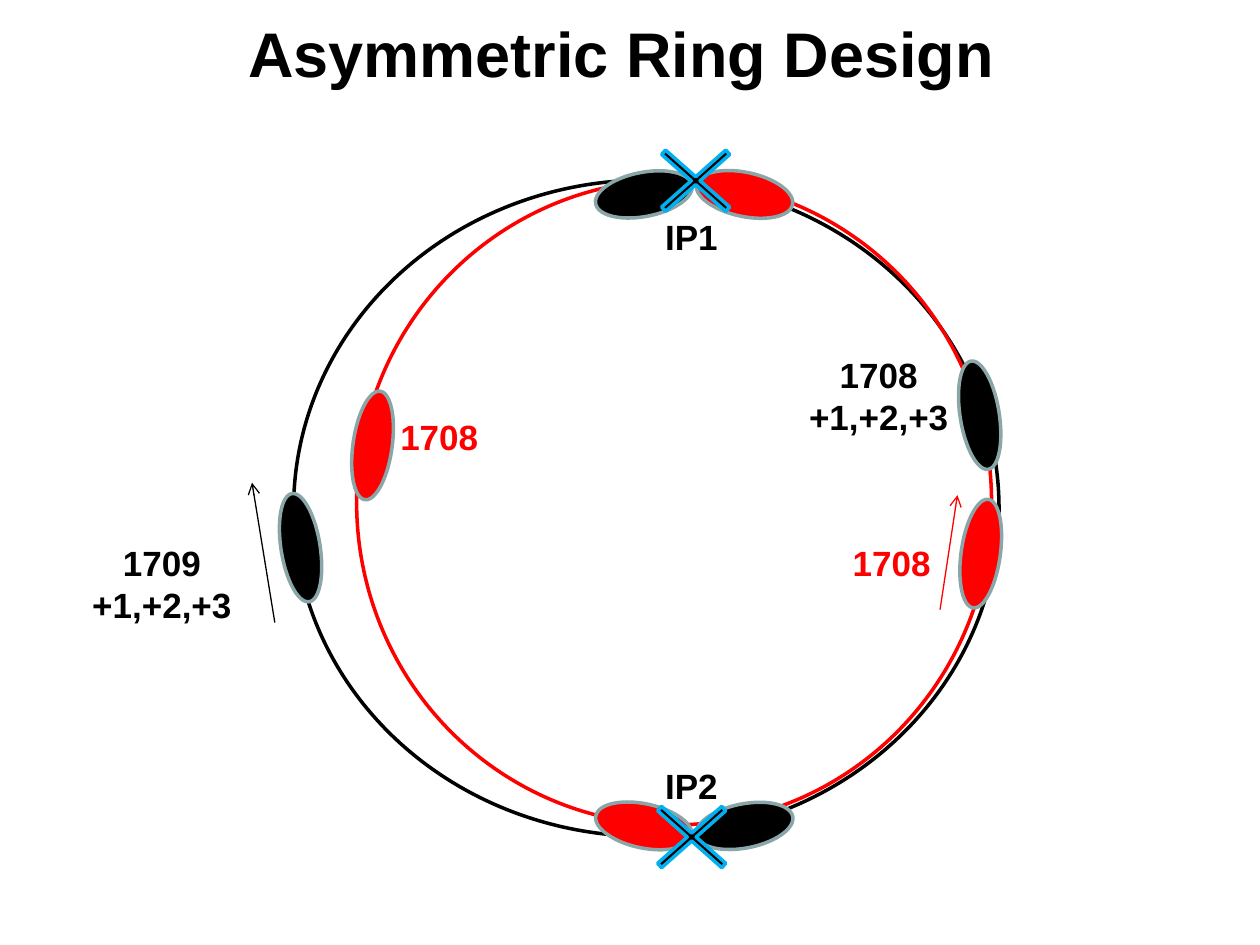
from lxml.etree import SubElement
from pptx import Presentation
from pptx.dml.color import RGBColor
from pptx.enum.shapes import MSO_CONNECTOR, MSO_SHAPE
from pptx.enum.text import MSO_ANCHOR, MSO_AUTO_SIZE, PP_ALIGN
from pptx.oxml.ns import qn
from pptx.util import Cm, Pt

BLACK, RED, GREY, CYAN = "000000", "FF0000", "8AA6A8", "00B0F0"

# Content, lengths in cm
TITLE = "Asymmetric Ring Design "
RINGS = [  # left, top, width, height, colour
    (5.92, 3.63, 14.22, 13.23, BLACK),
    (7.19, 3.63, 12.8, 13.0, RED),
]
IP_SIZE, ARC_SIZE, CROSS_SIZE = (1.98, 0.89), (2.21, 0.79), (2.49, 2.21)
MAGNETS = [  # centre x, centre y, size, rotation, colour
    (15.01, 3.92, IP_SIZE, 12, RED),
    (19.77, 11.16, ARC_SIZE, 98, RED),
    (7.51, 8.98, ARC_SIZE, 98, RED),
    (12.98, 16.65, IP_SIZE, 12, RED),
    (12.98, 3.92, IP_SIZE, 349, BLACK),
    (15.01, 16.65, IP_SIZE, 349, BLACK),
    (6.06, 11.04, ARC_SIZE, 261, BLACK),
    (19.75, 8.37, ARC_SIZE, 261, BLACK),
]
ARROWS = [  # start x, start y, end x, end y, colour
    (5.54, 12.55, 5.08, 9.73, BLACK),
    (18.95, 12.29, 19.3, 9.98, RED),
]
CROSSES = [(12.78, 2.54), (12.7, 15.77)]
LABELS = [  # lines, left, top, width, colour
    (["IP1"], 13.16, 4.22, 1.57, BLACK),
    (["IP2"], 13.16, 15.29, 1.57, BLACK),
    (["1709", "+1,+2,+3"], 1.6, 10.8, 3.33, BLACK),
    (["1708"], 7.82, 8.26, 2.11, RED),
    (["1708"], 16.94, 10.8, 2.11, RED),
    (["1708", "+1,+2,+3"], 16.05, 7.01, 3.33, BLACK),
]


def rgb(value):
    return RGBColor.from_string(value)


def add_run(p, text, size, color):
    r = p.add_run()
    r.text = text
    r.font.name, r.font.size, r.font.bold = "Arial", Pt(size), True
    r.font.color.rgb = rgb(color)


def add_shape(s, kind, left, top, width, height, line, fill=None):
    sp = s.shapes.add_shape(kind, Cm(left), Cm(top), Cm(width), Cm(height))
    sp.shadow.inherit = False
    if fill:
        sp.fill.solid()
        sp.fill.fore_color.rgb = rgb(fill)
    else:
        sp.fill.background()
    sp.line.color.rgb = rgb(line)
    sp.line.width = Pt(2)
    return sp


def add_arrow(s, x1, y1, x2, y2, color):
    line = s.shapes.add_connector(MSO_CONNECTOR.STRAIGHT, Cm(x1), Cm(y1), Cm(x2), Cm(y2))
    line.line.color.rgb = rgb(color)
    line.line.width = Pt(0.75)
    SubElement(line.line._get_or_add_ln(), qn("a:tailEnd"), type="arrow")
    SubElement(line._element.spPr, qn("a:effectLst"))


def add_label(s, lines, left, top, width, color):
    height = 1.12 if len(lines) == 1 else 1.96
    tf = s.shapes.add_textbox(Cm(left), Cm(top), Cm(width), Cm(height)).text_frame
    tf.word_wrap = False
    tf.auto_size = MSO_AUTO_SIZE.SHAPE_TO_FIT_TEXT
    for i, text in enumerate(lines):
        p = tf.paragraphs[0] if i == 0 else tf.add_paragraph()
        p.alignment = PP_ALIGN.CENTER if len(lines) > 1 else PP_ALIGN.LEFT
        add_run(p, text, 20, color)


def main():
    prs = Presentation()
    prs.slide_width, prs.slide_height = Cm(25.4), Cm(19.05)
    s = prs.slides.add_slide(prs.slide_layouts[5])

    # Title
    title = s.shapes.title
    title.left, title.top, title.width, title.height = Cm(0), Cm(0), Cm(25.4), Cm(2.11)
    tf = title.text_frame
    tf.vertical_anchor = MSO_ANCHOR.MIDDLE
    tf.paragraphs[0].alignment = PP_ALIGN.CENTER
    add_run(tf.paragraphs[0], TITLE, 36, BLACK)

    # Rings and the magnets on them
    for *box, color in RINGS:
        add_shape(s, MSO_SHAPE.OVAL, *box, line=color)
    for x, y, (w, h), angle, color in MAGNETS:
        magnet = add_shape(s, MSO_SHAPE.OVAL, x - w / 2, y - h / 2, w, h, GREY, color)
        magnet.rotation = angle

    # Beam directions
    for arrow in ARROWS:
        add_arrow(s, *arrow)

    # Interaction points
    for left, top in CROSSES:
        cross = add_shape(s, MSO_SHAPE.MATH_MULTIPLY, left, top, *CROSS_SIZE, CYAN, BLACK)
        cross.adjustments[0] = 0.054

    # Labels
    for label in LABELS:
        add_label(s, *label)

    prs.save("out.pptx")


if __name__ == "__main__":
    main()
